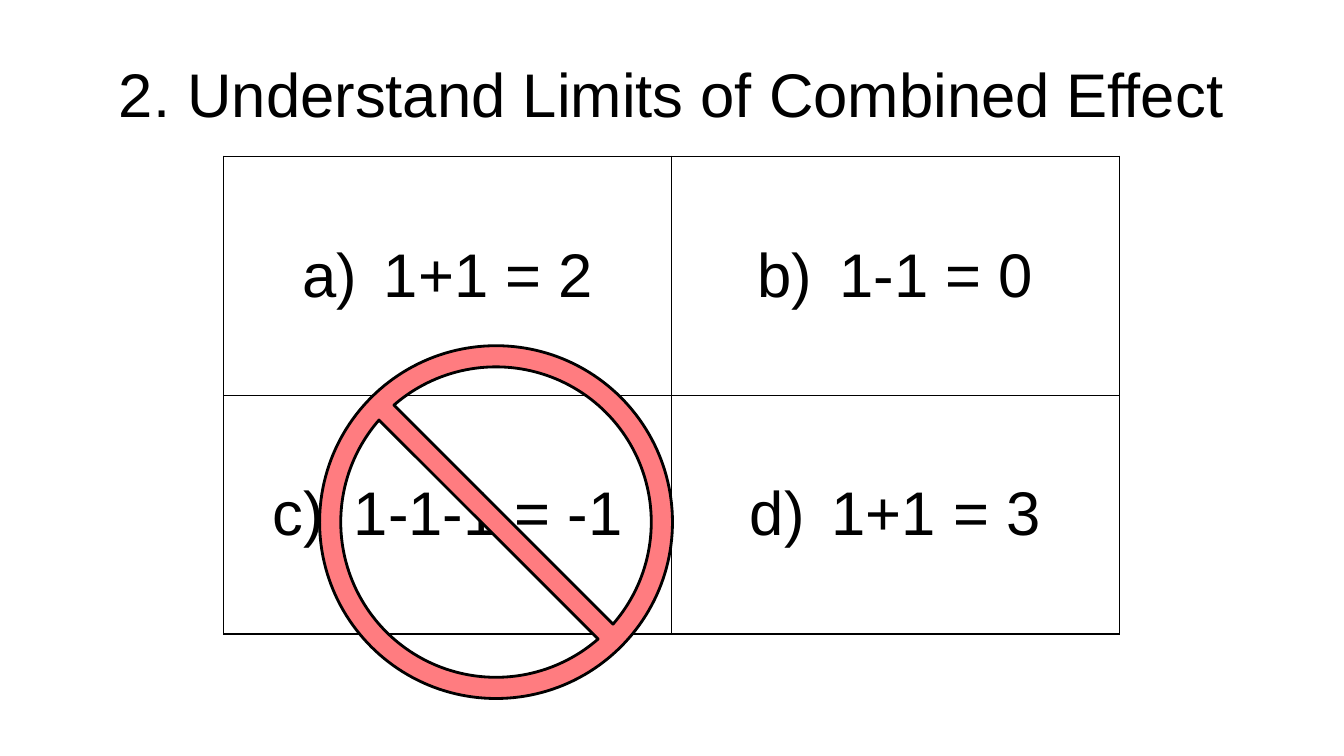
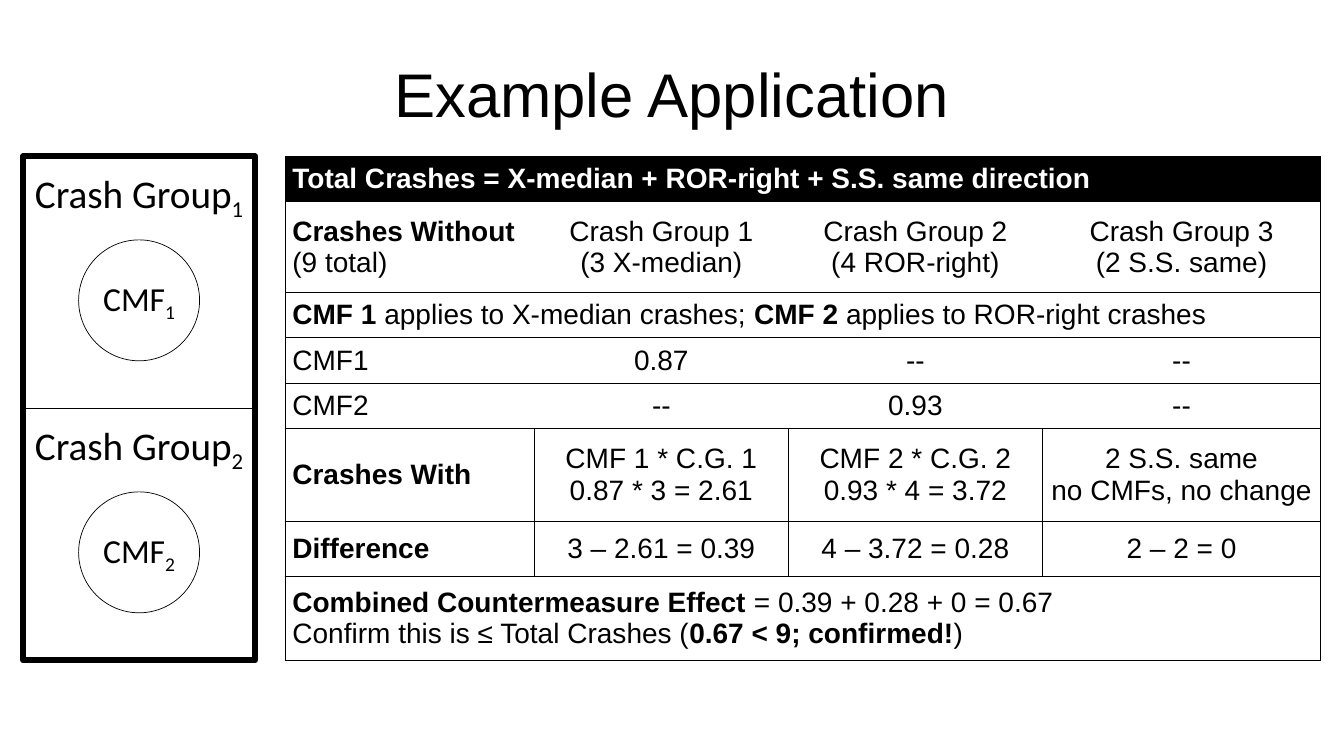
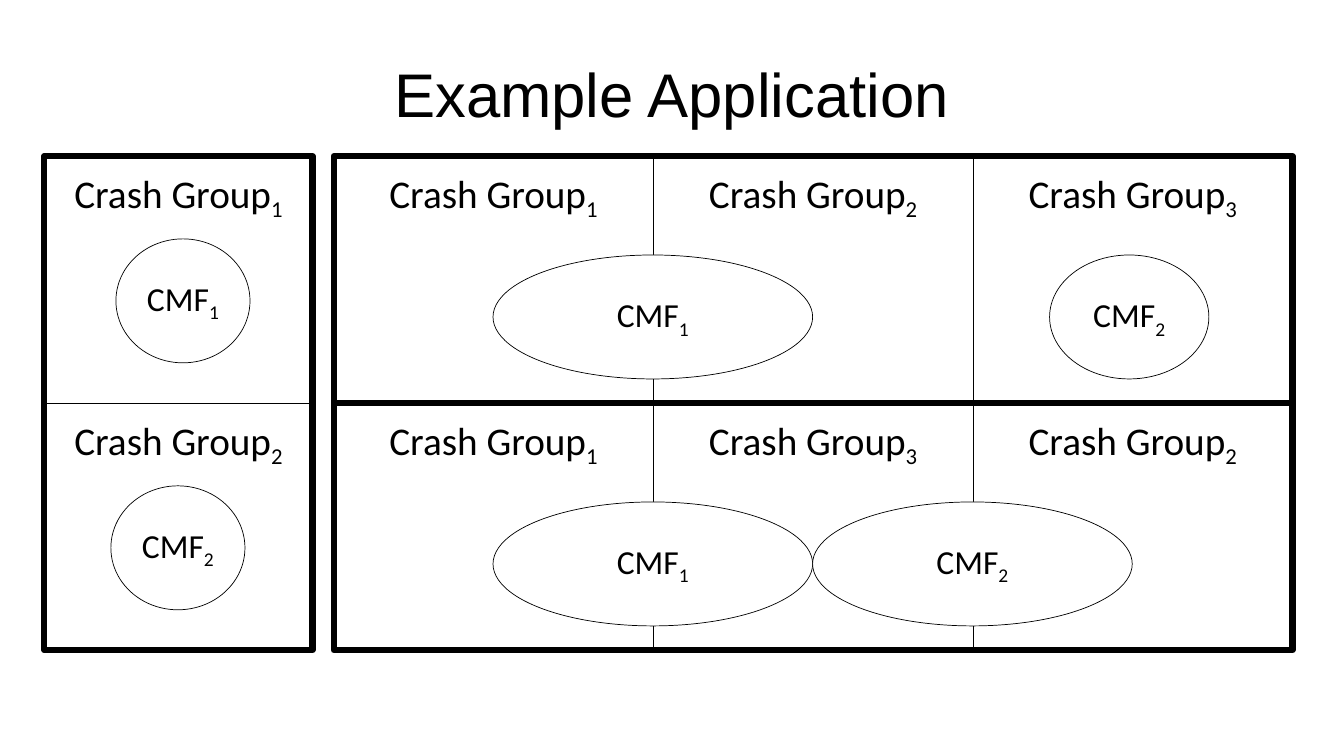
"""Build three slides on the combined effect of countermeasures."""

from dataclasses import dataclass
from typing import Optional

from lxml import etree
from pptx import Presentation
from pptx import util as u
from pptx.dml.color import RGBColor
from pptx.enum import shapes as kinds, text as layout
from pptx.oxml.ns import qn

EMU_PER_PX = 9144
CENTER = layout.PP_ALIGN.CENTER
LEFT = layout.PP_ALIGN.LEFT
MIDDLE = layout.MSO_ANCHOR.MIDDLE
TOP = layout.MSO_ANCHOR.TOP


@dataclass(frozen=True)
class Theme:
    ink: str = "000000"
    paper: str = "FFFFFF"
    ban: str = "FF7C80"
    main_font: str = "Arial"
    diagram_font: str = "Calibri"
    title_size: int = 44
    group_size: int = 28
    cmf_size: int = 24
    table_size: int = 20
    thin: float = 0.5
    thick: float = 4.5


THEME = Theme()


@dataclass(frozen=True)
class Box:
    left: int
    top: int
    width: int
    height: int


@dataclass(frozen=True)
class Grid:
    top: int
    columns: tuple[int, ...]
    heights: tuple[int, ...]
    rows: tuple[tuple[str, ...], ...]
    left: int = 283
    size: int = THEME.table_size
    border: float = 1
    verticals: bool = True
    header: bool = False
    numbered: bool = False
    insets: tuple[int, int, int, int] = (7, 0, 7, 0)


@dataclass(frozen=True)
class Oval:
    number: int
    box: Box


@dataclass(frozen=True)
class Panel:
    first_cell: Box
    groups: tuple[tuple[int, ...], ...]
    ovals: tuple[Oval, ...]


def px(length: int) -> u.Emu:
    """Turn pixels into EMU."""
    return u.Emu(length * EMU_PER_PX)


def place(box: Box) -> tuple[u.Emu, ...]:
    """Give the position and size of a box in EMU."""
    return px(box.left), px(box.top), px(box.width), px(box.height)


def set_insets(holder, insets: tuple[int, int, int, int], anchor=MIDDLE) -> None:
    """Set margins and vertical anchor of a text frame or table cell."""
    holder.margin_left, holder.margin_top, holder.margin_right, holder.margin_bottom = map(px, insets)
    holder.vertical_anchor = anchor


def write(frame, content: str, *, size: int, font: str = THEME.main_font, color: str = THEME.ink,
          bold: bool = False, align=CENTER, spacing: Optional[float] = None,
          letter: Optional[int] = None) -> None:
    """Write paragraphs in which ** toggles bold and ~ toggles subscript."""
    frame.word_wrap = True
    for index, line in enumerate(content.split("\n")):
        paragraph = frame.paragraphs[0] if index == 0 else frame.add_paragraph()
        paragraph.alignment = align
        if spacing:
            paragraph.line_spacing = spacing
        if letter:
            properties = paragraph._p.get_or_add_pPr()
            properties.set("marL", str(px(81)))
            properties.set("indent", str(px(-81)))
            etree.SubElement(properties, qn("a:buAutoNum"), type="alphaLcParenR", startAt=str(letter))
        for part_index, part in enumerate(line.split("**")):
            for piece_index, piece in enumerate(part.split("~")):
                if not piece:
                    continue
                run = paragraph.add_run()
                run.text = piece
                run.font.size = u.Pt(size)
                run.font.name = font
                run.font.bold = bold or part_index % 2 == 1
                run.font.color.rgb = RGBColor.from_string(color)
                if piece_index % 2:
                    run.font._element.set("baseline", "-25000")


def add_title(slide, content: str, margin: int = 0) -> None:
    """Add the centred slide title."""
    frame = slide.shapes.add_textbox(*place(Box(margin, 30, 1333 - 2 * margin, 125))).text_frame
    write(frame, content, size=THEME.title_size)
    frame.vertical_anchor = MIDDLE


def add_outline(parent, kind, box: Box, fill: Optional[str], width: float):
    """Add a preset shape with an ink outline."""
    shape = parent.add_shape(kind, *place(box))
    shape.shadow.inherit = False
    if fill:
        shape.fill.solid()
        shape.fill.fore_color.rgb = RGBColor.from_string(fill)
    else:
        shape.fill.background()
    shape.line.color.rgb = RGBColor.from_string(THEME.ink)
    shape.line.width = u.Pt(width)
    return shape


def set_borders(cell, width: float, left: bool, right: bool) -> None:
    """Draw horizontal borders and the chosen vertical ones."""
    properties = cell._tc.get_or_add_tcPr()
    for index, (side, shown) in enumerate((("L", left), ("R", right), ("T", True), ("B", True))):
        line = etree.Element(qn(f"a:ln{side}"), w=str(u.Pt(width)))
        if shown:
            fill = etree.SubElement(line, qn("a:solidFill"))
            etree.SubElement(fill, qn("a:srgbClr"), val=THEME.ink)
        else:
            etree.SubElement(line, qn("a:noFill"))
        properties.insert(index, line)


def add_grid(slide, grid: Grid) -> None:
    """Add a table, merging each row that holds a single entry."""
    count = len(grid.columns)
    box = Box(grid.left, grid.top, sum(grid.columns), sum(grid.heights))
    table = slide.shapes.add_table(len(grid.rows), count, *place(box)).table
    table.first_row = table.horz_banding = False
    for column, width in zip(table.columns, grid.columns):
        column.width = px(width)
    for row_index, (height, entries) in enumerate(zip(grid.heights, grid.rows)):
        table.rows[row_index].height = px(height)
        dark = grid.header and row_index == 0
        spanning = len(entries) == 1
        if spanning and count > 1:
            table.cell(row_index, 0).merge(table.cell(row_index, count - 1))
        for column_index in range(count):
            cell = table.cell(row_index, column_index)
            if dark:
                cell.fill.solid()
                cell.fill.fore_color.rgb = RGBColor.from_string(THEME.ink)
            else:
                cell.fill.background()
            set_borders(cell, grid.border, grid.verticals or column_index == 0,
                        grid.verticals or spanning or column_index == count - 1)
            set_insets(cell, grid.insets)
            if column_index < len(entries):
                write(cell.text_frame, entries[column_index], size=grid.size, bold=dark,
                      color=THEME.paper if dark else THEME.ink,
                      align=CENTER if grid.numbered or column_index else LEFT,
                      letter=row_index * count + column_index + 1 if grid.numbered else None)


def add_panel(slide, panel: Panel) -> None:
    """Add crash group cells, their CMF ovals and a thick frame as one group."""
    parent = slide.shapes.add_group_shape().shapes
    cell = panel.first_cell
    for row_index, numbers in enumerate(panel.groups):
        for column_index, number in enumerate(numbers):
            box = Box(cell.left + column_index * cell.width, cell.top + row_index * cell.height,
                      cell.width, cell.height)
            frame = add_outline(parent, kinds.MSO_SHAPE.RECTANGLE, box, THEME.paper, THEME.thin).text_frame
            set_insets(frame, (0, 10, 0, 0), TOP)
            write(frame, f"Crash Group~{number}", size=THEME.group_size,
                  font=THEME.diagram_font, spacing=1.05)
    for oval in panel.ovals:
        frame = add_outline(parent, kinds.MSO_SHAPE.OVAL, oval.box, THEME.paper, THEME.thin).text_frame
        set_insets(frame, (0, 0, 0, 0))
        write(frame, f"CMF~{oval.number}", size=THEME.cmf_size, font=THEME.diagram_font)
    border = Box(cell.left, cell.top, cell.width * len(panel.groups[0]), cell.height * len(panel.groups))
    add_outline(parent, kinds.MSO_SHAPE.RECTANGLE, border, None, THEME.thick)


LIMITS = Grid(
    155, (444, 444), (237, 237),
    (("1+1 = 2", "1-1 = 0"), ("1-1-1 = -1", "1+1 = 3")),
    left=222, size=THEME.title_size, numbered=True, insets=(10, 5, 10, 5),
)

COLUMNS = (247, 252, 252, 276)
CALCULATION = (
    Grid(155, COLUMNS, (45, 90, 45, 45, 45), (
        ("Total Crashes = X-median + ROR-right + S.S. same direction",),
        ("**Crashes Without**\n(9 total)", "Crash Group 1\n(3 X-median)",
         "Crash Group 2\n(4 ROR-right)", "Crash Group 3\n(2 S.S. same)"),
        ("**CMF 1** applies to X-median crashes; **CMF 2 **applies to ROR-right crashes",),
        ("CMF1", "0.87", "--", "--"),
        ("CMF2", "--", "0.93", "--"),
    ), border=0.75, verticals=False, header=True),
    Grid(425, COLUMNS, (92,), (
        ("**Crashes With**", "CMF 1 * C.G. 1\n0.87 * 3 = 2.61",
         "CMF 2 * C.G. 2\n0.93 * 4 = 3.72", "2 S.S. same\nno CMFs, no change"),
    )),
    Grid(517, COLUMNS, (55,), (
        ("**Difference**", "3 – 2.61 = 0.39", "4 – 3.72 = 0.28", "2 – 2 = 0"),
    )),
    Grid(572, (sum(COLUMNS),), (83,), (
        ("**Combined Countermeasure Effect** = 0.39 + 0.28 + 0 = 0.67\n"
         "Confirm this is ≤ Total Crashes (**0.67 < 9; confirmed!**)",),
    )),
)

SEPARATE_GROUPS = Panel(
    Box(23, 155, 230, 250), ((1,), (2,)),
    (Oval(1, Box(78, 238, 120, 120)), Oval(2, Box(78, 488, 120, 120))),
)

ARRANGEMENTS = (
    Panel(Box(331, 155, 317, 245), ((1, 2, 3),),
          (Oval(1, Box(489, 253, 317, 123)), Oval(2, Box(1041, 253, 158, 123)))),
    Panel(Box(331, 400, 317, 245), ((1, 3, 2),),
          (Oval(1, Box(489, 498, 317, 123)), Oval(2, Box(806, 498, 317, 123)))),
    Panel(Box(44, 155, 266, 245), ((1,), (2,)),
          (Oval(1, Box(115, 237, 133, 123)), Oval(2, Box(110, 482, 133, 123)))),
)


def main() -> None:
    """Build and save the presentation."""
    deck = Presentation()
    deck.slide_width, deck.slide_height = px(1333), px(750)
    limits, calculation, arrangements = (deck.slides.add_slide(deck.slide_layouts[6]) for _ in range(3))

    add_title(limits, "2. Understand Limits of Combined Effect", margin=67)
    add_grid(limits, LIMITS)
    ban = add_outline(limits.shapes, kinds.MSO_SHAPE.NO_SYMBOL, Box(317, 343, 350, 350), THEME.ban, 2)
    ban.adjustments[0] = 0.06

    add_title(calculation, "Example Application")
    add_panel(calculation, SEPARATE_GROUPS)
    for grid in CALCULATION:
        add_grid(calculation, grid)

    add_title(arrangements, "Example Application")
    for panel in ARRANGEMENTS:
        add_panel(arrangements, panel)

    deck.save("out.pptx")


if __name__ == "__main__":
    main()
